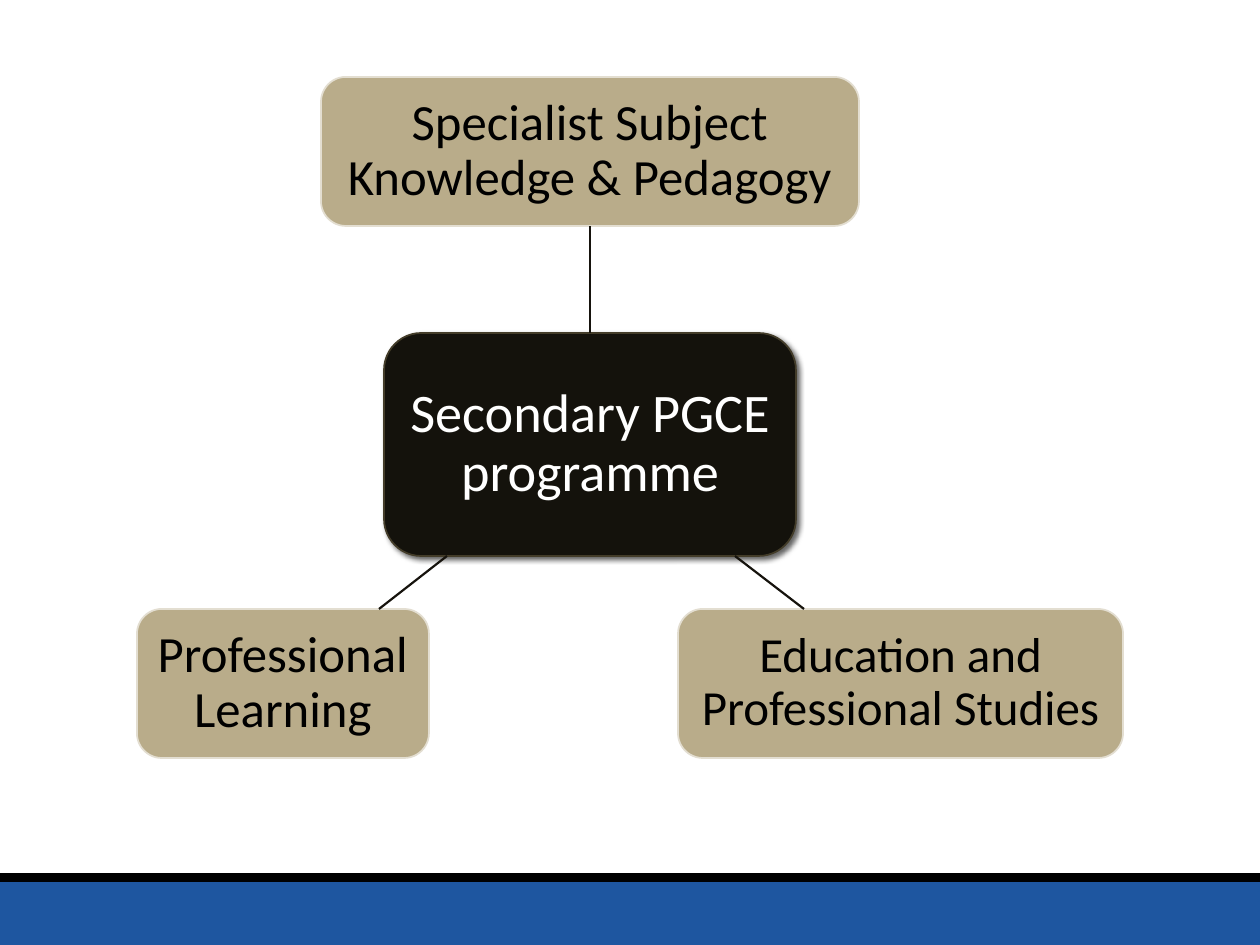
from lxml.etree import SubElement as Sub
from pptx import Presentation
from pptx.dml.color import RGBColor as RGB
from pptx.enum.shapes import MSO_CONNECTOR as Conn, MSO_SHAPE as Geo
from pptx.enum.text import MSO_ANCHOR as Anchor, PP_ALIGN as Align
from pptx.oxml.ns import qn
from pptx.util import Emu, Pt


class Theme:
    font = "Calibri"
    blue, black, white = "1E56A0", "000000", "FFFFFF"
    dark, edge = "14120C", "433C29"
    tan, rim = "B9AC8A", "E3DED1"
    link = "16130D"
    hub, large, small = 31, 29, 28
    thin, thick = 1, 1.25


def px(*vals):
    """Turn pixels, 126 to the inch, into EMU."""
    return [Emu(round(v * 914400 / 126)) for v in vals]


def block(geo, spot, fill, line=None):
    shape = slide.shapes.add_shape(geo, *px(*spot))
    shape.shadow.inherit = False
    shape.fill.solid()
    shape.fill.fore_color.rgb = RGB.from_string(fill)
    if line:
        shape.line.color.rgb = RGB.from_string(line)
        shape.line.width = Pt(Theme.thin)
    else:
        shape.line.fill.background()
    return shape


deck = Presentation()
deck.slide_width, deck.slide_height = px(1260, 945)
slide = deck.slides.add_slide(deck.slide_layouts[6])

# Footer bands
block(Geo.RECTANGLE, (0, 882, 1260, 63), Theme.blue)
block(Geo.RECTANGLE, (0, 873, 1260, 9), Theme.black)

# Hub and its three parts: text, place, inset, size, text colour, fill, line
nodes = [
    ("Secondary PGCE programme", (384, 333, 412, 223), 12,
     Theme.hub, Theme.white, Theme.dark, Theme.edge),
    ("Specialist Subject Knowledge & Pedagogy", (321, 77, 538, 149), 10,
     Theme.large, Theme.black, Theme.tan, Theme.rim),
    ("Education and Professional Studies", (678, 609, 445, 149), 10,
     Theme.small, Theme.black, Theme.tan, Theme.rim),
    ("Professional Learning", (137, 609, 292, 149), 10,
     Theme.large, Theme.black, Theme.tan, Theme.rim),
]
boxes = []
for text, spot, inset, size, ink, fill, line in nodes:
    box = block(Geo.ROUNDED_RECTANGLE, spot, fill, line)
    boxes.append(box)
    frame = box.text_frame
    frame.word_wrap = True
    frame.vertical_anchor = Anchor.MIDDLE
    pad, = px(inset)
    frame.margin_left = frame.margin_right = pad
    frame.margin_top = frame.margin_bottom = pad
    para = frame.paragraphs[0]
    para.alignment = Align.CENTER
    para.line_spacing = 0.9
    run = para.add_run()
    run.text = text
    run.font.name = Theme.font
    run.font.size = Pt(size)
    run.font.color.rgb = RGB.from_string(ink)

# Soft shadow under the hub
hub, top = boxes[:2]
glow = hub._element.spPr.find(qn("a:effectLst"))
shade = Sub(glow, qn("a:outerShdw"), blurRad=str(Pt(3)), dist=str(Pt(2)),
            dir=str(45 * 60000), algn="ctr", rotWithShape="0")
tint = Sub(shade, qn("a:srgbClr"), val=Theme.black)
Sub(tint, qn("a:alpha"), val="60000")

# Links from the hub
links = []
for ends in [(590, 333, 590, 226), (735, 556, 804, 609), (447, 556, 379, 609)]:
    link = slide.shapes.add_connector(Conn.STRAIGHT, *px(*ends))
    link.line.color.rgb = RGB.from_string(Theme.link)
    link.line.width = Pt(Theme.thick)
    Sub(link._element.spPr, qn("a:effectLst"))
    links.append(link)
links[0].begin_connect(hub, 0)
links[0].end_connect(top, 2)

deck.save("out.pptx")
